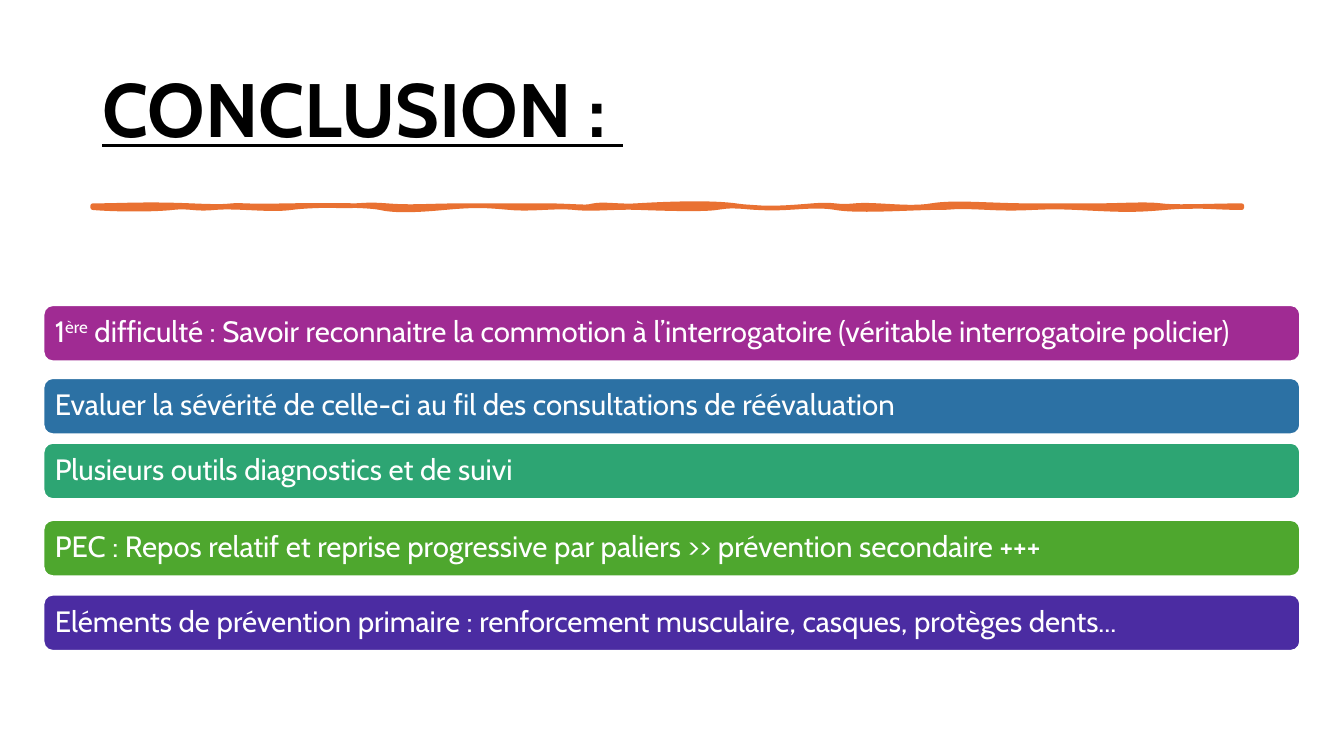
from dataclasses import dataclass

from lxml import etree
from pptx import Presentation
from pptx.dml.color import RGBColor
from pptx.enum.shapes import MSO_SHAPE
from pptx.enum.text import MSO_ANCHOR, PP_ALIGN
from pptx.oxml.ns import qn
from pptx.util import Pt

ROUNDED = MSO_SHAPE.ROUNDED_RECTANGLE
MIDDLE = MSO_ANCHOR.MIDDLE
LEFT = PP_ALIGN.LEFT
BLANK_LAYOUT = 6
UNITS_PER_HUNDREDTH_INCH = 72


@dataclass(frozen=True)
class Theme:
    font: str = "Cabin"
    title_size: float = 54
    bar_size: float = 21
    title_color: str = "000000"
    light: str = "FFFFFF"
    accent: str = "E97132"
    purple: str = "A02B93"
    blue: str = "2C71A4"
    teal: str = "2DA573"
    green: str = "4EA72E"
    violet: str = "4B2CA2"


THEME = Theme()

KEY_POINTS = [
    (217.9, THEME.purple, [
        ("1", 0),
        ("ère", 30),
        (" difficulté : Savoir reconnaitre la commotion à l’interrogatoire (véritable interrogatoire policier)", 0),
    ]),
    (270, THEME.blue, [("Evaluer la sévérité de celle-ci au fil des consultations de réévaluation", 0)]),
    (316.3, THEME.teal, [("Plusieurs outils diagnostics et de suivi", 0)]),
    (371.4, THEME.green, [
        ("PEC : Repos relatif et reprise progressive par paliers >> prévention secondaire +++", 0),
    ]),
    (424.7, THEME.violet, [
        ("Eléments de prévention primaire : renforcement musculaire, casques, protèges dents...", 0),
    ]),
]

BRUSH_LEFT, BRUSH_RIGHT = 92, 1232
BRUSH_TOP, BRUSH_BOTTOM = 204, 206
UPPER_EDGE = [
    (119, 204, 144, 202, 190), (237, 206, 220, 203, 244), (267, 205, 303, 203, 331),
    (360, 205, 359, 202, 384), (410, 206, 423, 204, 460), (498, 204, 514, 204, 548),
    (581, 205, 581, 206, 589), (598, 202, 615, 205, 631), (647, 203, 701, 200, 730),
    (759, 208, 781, 206, 806), (831, 202, 827, 206, 848), (868, 202, 901, 208, 924),
    (947, 200, 982, 204, 1023), (1063, 204, 1063, 204, 1087), (1112, 204, 1136, 202, 1152),
    (1168, 206, 1203, 204, BRUSH_RIGHT),
]
LOWER_EDGE = [
    (1205, 206, 1189, 203, 1156), (1122, 209, 1110, 208, 1068), (1027, 204, 1023, 208, 981),
    (939, 204, 952, 206, 928), (904, 206, 851, 210, 829), (806, 202, 782, 208, 753),
    (724, 204, 725, 204, 711), (698, 208, 661, 207, 635), (609, 205, 590, 208, 570),
    (551, 204, 528, 208, 506), (483, 204, 473, 203, 441), (409, 209, 390, 209, 377),
    (363, 203, 310, 203, 289), (268, 209, 235, 204, 213), (192, 208, 189, 204, 171),
    (154, 208, 114, 208, BRUSH_LEFT),
]


def rgb(color):
    return RGBColor.from_string(color)


def brush_units(x, y):
    return x * UNITS_PER_HUNDREDTH_INCH, y * UNITS_PER_HUNDREDTH_INCH


def bend(segment, handles):
    curve = etree.Element(qn("a:cubicBezTo"))
    for x, y in handles:
        local_x, local_y = brush_units(x - BRUSH_LEFT, y - BRUSH_TOP)
        etree.SubElement(curve, qn("a:pt"), x=str(local_x), y=str(local_y))
    segment.getparent().replace(segment, curve)


class ConclusionSlide:
    def __init__(self, slide, theme):
        self.shapes = slide.shapes
        self.theme = theme

    def style_run(self, run, size, color):
        run.font.name = self.theme.font
        run.font.size = Pt(size)
        run.font.color.rgb = rgb(color)

    def paint(self, shape, fill, line, width):
        shape.shadow.inherit = False
        shape.fill.solid()
        shape.fill.fore_color.rgb = rgb(fill)
        shape.line.color.rgb = rgb(line)
        shape.line.width = Pt(width)

    def title(self, text, left, top, width, height):
        heading = self.shapes.add_textbox(Pt(left), Pt(top), Pt(width), Pt(height))
        frame = heading.text_frame
        frame.word_wrap = True
        frame.vertical_anchor = MIDDLE
        frame.text = text
        paragraph = frame.paragraphs[0]
        paragraph.line_spacing = 0.9
        run = paragraph.runs[0]
        self.style_run(run, self.theme.title_size, self.theme.title_color)
        run.font.bold = True
        run.font.underline = True

    def brush_stroke(self):
        upper = [((x1, y1), (x2, y2), (x, BRUSH_TOP)) for x1, y1, x2, y2, x in UPPER_EDGE]
        lower = [((x1, y1), (x2, y2), (x, BRUSH_BOTTOM)) for x1, y1, x2, y2, x in LOWER_EDGE]
        right_end = (BRUSH_RIGHT, BRUSH_BOTTOM)
        curves = upper + [(right_end,) * 3] + lower
        builder = self.shapes.build_freeform(*brush_units(BRUSH_LEFT, BRUSH_TOP), scale=Pt(0.01))
        builder.add_line_segments([brush_units(*handles[-1]) for handles in curves], close=True)
        stroke = builder.convert_to_shape()
        for segment, handles in zip(list(stroke._element.iter(qn("a:lnTo"))), curves):
            bend(segment, handles)
        self.paint(stroke, self.theme.accent, self.theme.accent, 3.25)

    def bar(self, top, color, pieces):
        bar = self.shapes.add_shape(ROUNDED, Pt(31), Pt(top), Pt(897.8), Pt(40.3))
        self.paint(bar, color, self.theme.light, 1.5)
        frame = bar.text_frame
        frame.word_wrap = True
        frame.vertical_anchor = MIDDLE
        frame.margin_left = frame.margin_right = Pt(6.2)
        frame.margin_top = frame.margin_bottom = Pt(6)
        paragraph = frame.paragraphs[0]
        paragraph.alignment = LEFT
        paragraph.line_spacing = 0.9
        for text, raised in pieces:
            run = paragraph.add_run()
            run.text = text
            self.style_run(run, self.theme.bar_size, self.theme.light)
            if raised:
                run._r.get_or_add_rPr().set("baseline", str(raised * 1000))


def main():
    deck = Presentation()
    deck.slide_width, deck.slide_height = Pt(960), Pt(540)
    slide = deck.slides.add_slide(deck.slide_layouts[BLANK_LAYOUT])
    conclusion = ConclusionSlide(slide, THEME)
    conclusion.title("CONCLUSION : ", 66, 28.8, 828, 104.4)
    conclusion.brush_stroke()
    for top, color, pieces in KEY_POINTS:
        conclusion.bar(top, color, pieces)
    deck.save("out.pptx")


if __name__ == "__main__":
    main()
